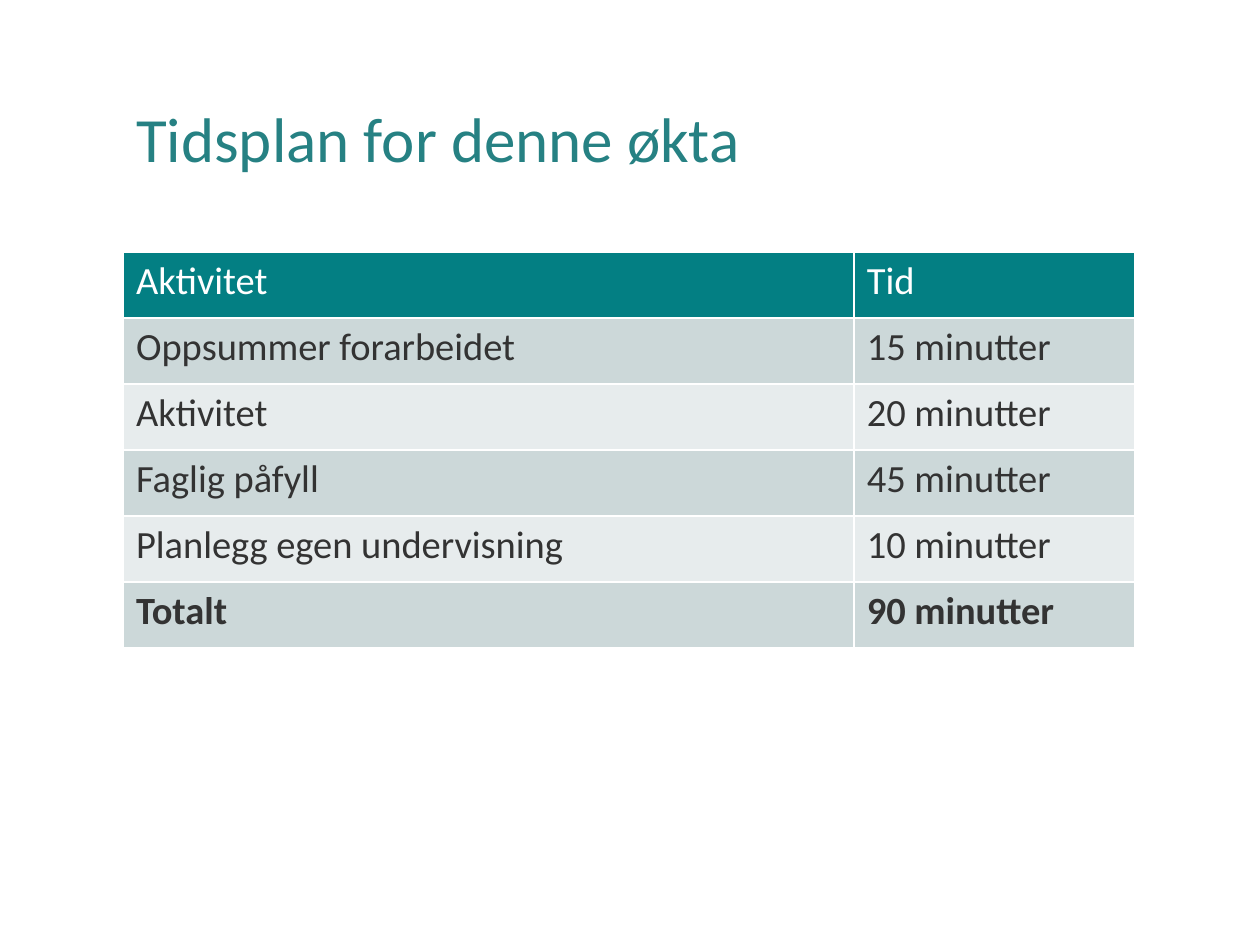
from pptx import Presentation
from pptx.dml.color import RGBColor
from pptx.enum import text
from pptx.util import Cm, Pt

TITLE = "Tidsplan for denne økta"
SCHEDULE = [
    ("Aktivitet", "Tid"),
    ("Oppsummer forarbeidet", "15 minutter"),
    ("Aktivitet", "20 minutter"),
    ("Faglig påfyll", "45 minutter"),
    ("Planlegg egen undervisning", "10 minutter"),
    ("Totalt", "90 minutter"),
]
COLUMN_WIDTHS = (14.73, 5.66)
ROW_HEIGHT = 1.33
LEFT = 2.49
HEADER_FILL = "037F83"
BAND_FILLS = ("E7ECED", "CCD8D9")


def style_font(font, size, color, bold=False):
    font.name = "Calibri"
    font.size = Pt(size)
    font.bold = bold
    font.color.rgb = RGBColor.from_string(color)


def add_title(slide):
    title = slide.shapes.title
    title.left, title.top = Cm(LEFT), Cm(1.02)
    title.width, title.height = Cm(21.06), Cm(3.68)
    title.text_frame.vertical_anchor = text.MSO_ANCHOR.MIDDLE
    title.text_frame.text = TITLE
    heading = title.text_frame.paragraphs[0]
    heading.alignment = text.PP_ALIGN.LEFT
    heading.line_spacing = 0.9
    style_font(heading.font, 36, "268183")


def add_schedule(slide):
    schedule = slide.shapes.add_table(
        len(SCHEDULE), len(COLUMN_WIDTHS), Cm(LEFT), Cm(5.08),
        Cm(sum(COLUMN_WIDTHS)), Cm(ROW_HEIGHT * len(SCHEDULE))).table
    for column, width in zip(schedule.columns, COLUMN_WIDTHS):
        column.width = Cm(width)
    for r, entries in enumerate(SCHEDULE):
        schedule.rows[r].height = Cm(ROW_HEIGHT)
        is_header, is_total = r == 0, r == len(SCHEDULE) - 1
        fill = HEADER_FILL if is_header else BAND_FILLS[r % 2]
        for c, entry in enumerate(entries):
            cell = schedule.cell(r, c)
            cell.text = entry
            cell.fill.solid()
            cell.fill.fore_color.rgb = RGBColor.from_string(fill)
            style_font(cell.text_frame.paragraphs[0].font, 22,
                       "FFFFFF" if is_header else "333333", is_total)


def main():
    deck = Presentation()
    deck.slide_width, deck.slide_height = Cm(25.4), Cm(19.05)
    slide = deck.slides.add_slide(deck.slide_layouts[5])
    add_title(slide)
    add_schedule(slide)
    deck.save("out.pptx")


if __name__ == "__main__":
    main()
